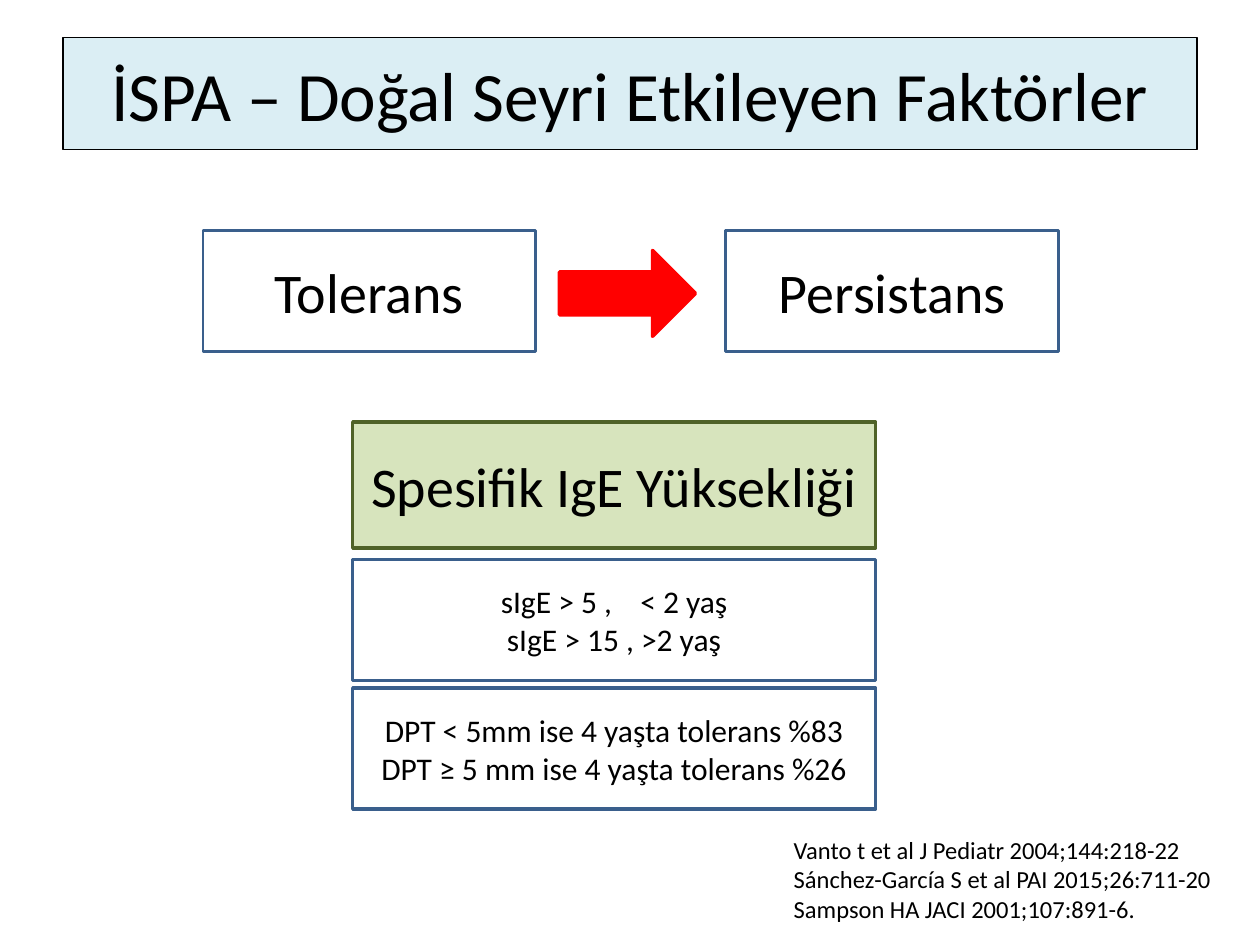
from dataclasses import dataclass
from typing import Optional

from pptx import Presentation
from pptx.dml.color import RGBColor as Rgb
from pptx.enum.shapes import MSO_SHAPE as Kind
from pptx.enum.text import MSO_ANCHOR as Anchor, MSO_AUTO_SIZE as Fit, PP_ALIGN as Align
from pptx.util import Cm, Pt

HUES = {
    "ink": "000000",
    "white": "FFFFFF",
    "blue": "3A5F8C",
    "red": "FF0000",
    "lime": "D7E4BD",
    "olive": "4F6228",
    "sky": "DBEEF4",
}
FONT = "Calibri"
MARK = "|"
GAP = 1200


@dataclass
class Box:
    text: str
    left: float
    top: float
    width: float
    height: float
    size: float
    line: str = "blue"
    weight: float = 2
    fill: Optional[str] = None
    kind: Kind = Kind.RECTANGLE


def hue(name: str) -> Rgb:
    return Rgb.from_string(HUES[name])


def write(frame, text: str, size: float, align: Align) -> None:
    for row, line in enumerate(text.split("\n")):
        para = frame.paragraphs[0] if row == 0 else frame.add_paragraph()
        para.alignment = align
        for spot, part in enumerate(line.split(MARK)):
            run = para.add_run()
            run.text = part
            run.font.name = FONT
            run.font.size = Pt(size)
            run.font.color.rgb = hue("ink")
            if spot == 1:
                run.font._element.set("spc", str(GAP))


def draw(slide, box: Box) -> None:
    shape = slide.shapes.add_shape(
        box.kind, Cm(box.left), Cm(box.top), Cm(box.width), Cm(box.height)
    )
    shape.shadow.inherit = False
    if box.fill:
        shape.fill.solid()
        shape.fill.fore_color.rgb = hue(box.fill)
    else:
        shape.fill.background()
    shape.line.color.rgb = hue(box.line)
    shape.line.width = Pt(box.weight)
    if box.text:
        shape.text_frame.word_wrap = True
        shape.text_frame.vertical_anchor = Anchor.MIDDLE
        write(shape.text_frame, box.text, box.size, Align.CENTER)


def cite(slide, text: str) -> None:
    note = slide.shapes.add_textbox(Cm(15.75), Cm(16.71), Cm(9.12), Cm(2.06))
    note.text_frame.word_wrap = False
    note.text_frame.auto_size = Fit.SHAPE_TO_FIT_TEXT
    write(note.text_frame, text, 14, Align.LEFT)


STATES = [
    Box(name, left, 4.65, 6.71, 2.44, 32, weight=1.5)
    for name, left in (("Tolerans", 4.09), ("Persistans", 14.63))
]
ARROW = Box("", 11.28, 5.05, 2.74, 1.73, 18, "red", fill="red", kind=Kind.RIGHT_ARROW)
HEAD = Box("Spesifik IgE Yüksekliği", 7.11, 8.51, 10.54, 2.54, 32, "olive", fill="lime")
RULES = [
    Box(text, 7.11, top, 10.54, 2.44, 18, fill="white")
    for text, top in (
        ("sIgE > 5 ,| |< 2 yaş\nsIgE > 15 , >2 yaş", 11.28),
        ("DPT < 5mm ise 4 yaşta tolerans %83\nDPT ≥ 5 mm ise 4 yaşta tolerans %26", 13.87),
    )
]
TITLE = Box(
    "İSPA – Doğal Seyri Etkileyen Faktörler",
    1.27, 0.76, 22.86, 2.26, 39.6, "ink", 0.75, "sky",
)
REFS = (
    "Vanto t et al J Pediatr 2004;144:218-22\n"
    "Sánchez-García S et al PAI 2015;26:711-20\n"
    "Sampson HA JACI 2001;107:891-6."
)


def main() -> None:
    deck = Presentation()
    deck.slide_width = Cm(25.4)
    deck.slide_height = Cm(19.05)
    slide = deck.slides.add_slide(deck.slide_layouts[6])
    for box in (TITLE, *STATES, ARROW, HEAD, *RULES):
        draw(slide, box)
    cite(slide, REFS)
    deck.save("out.pptx")


if __name__ == "__main__":
    main()
